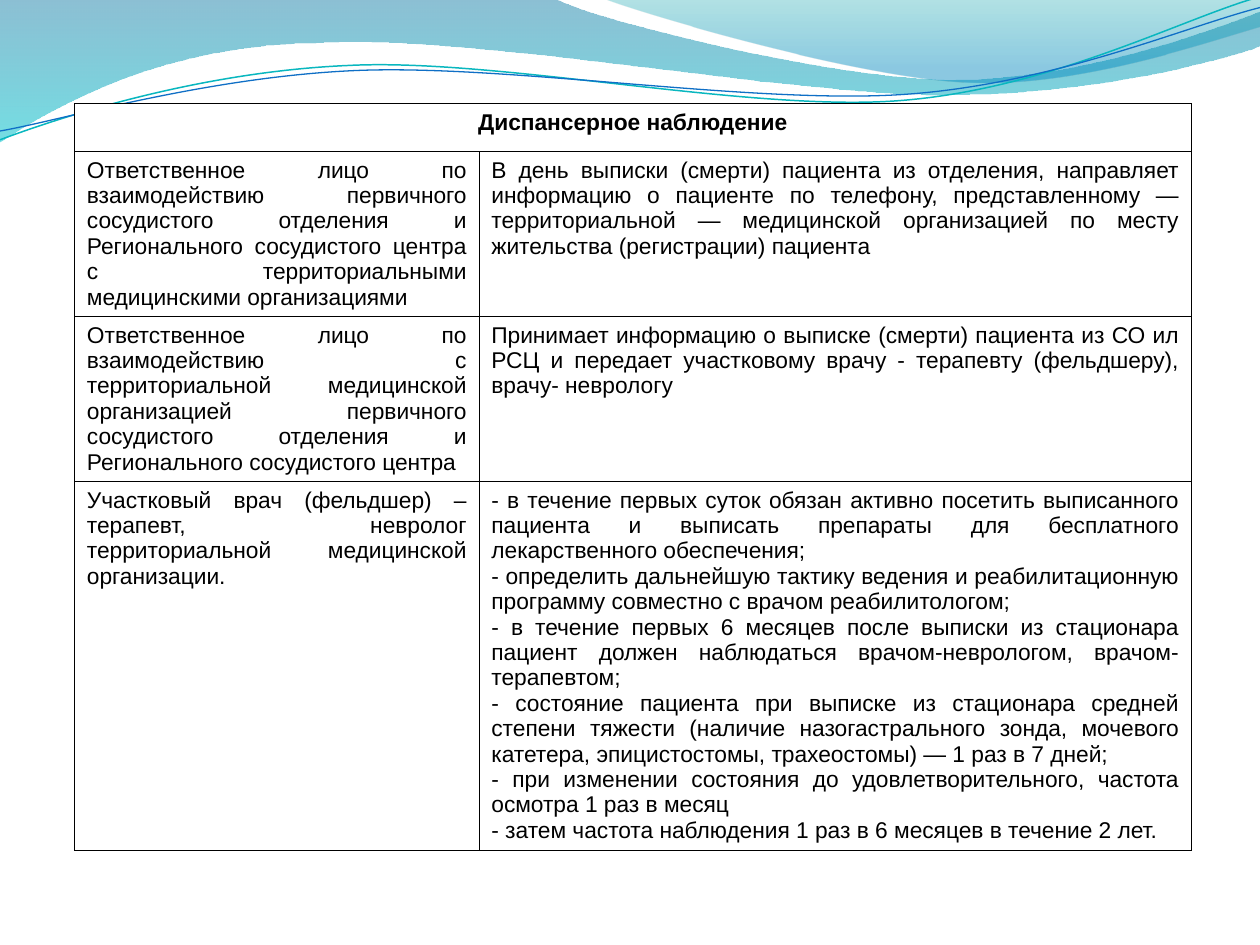
from dataclasses import dataclass

from lxml.etree import SubElement
from pptx import Presentation
from pptx.dml.color import RGBColor
from pptx.enum.text import PP_ALIGN
from pptx.oxml.ns import qn
from pptx.util import Inches, Pt


@dataclass(frozen=True)
class Theme:
    font: str = "Arial"
    size: float = 13
    text: str = "000000"
    paper: str = "FFFFFF"
    border: float = 0.06
    # Gradient stops: position in percent, colour, opacity in percent
    wave: tuple = ((0, "0074A0", 45), (100, "00C4CD", 55))
    crest: tuple = ((20, "008ABF", 45), (100, "00A0A8", 30))
    teal: str = "09B7BF"
    blue: str = "0F6FC6"


THEME = Theme()
W, H = 10, 7.5
COLUMNS = (3.21, 5.65)
ROW_HEIGHTS = (0.38, 1.31, 1.31, 2.93)

# Outlines in inches: a pair is a straight step, six numbers are a Bezier curve
WAVE = [(0, 0), (4.4, -0.01), (4.76, 0.17, 6.64, 0.63, 7.58, 0.63),
        (8.53, 0.63, 9.58, 0.26, 10, 0.09), (10.01, 0.36),
        (9.83, 0.44, 8.7, 0.76, 7.46, 0.75),
        (6.22, 0.75, 3.82, 0.28, 2.57, 0.34),
        (1.29, 0.35, 0.46, 0.83, -0.01, 1.13)]
CREST = [(4.79, -0.01), (5.09, 0.11, 6.82, 0.62, 7.69, 0.65),
         (8.56, 0.69, 9.61, 0.32, 10, 0.21), (10, 0)]
TEAL_LINE = [(0, 1.11), (0.48, 0.93, 1.58, 0.57, 2.77, 0.52),
             (3.95, 0.46, 5.93, 0.89, 7.13, 0.8),
             (8.33, 0.71, 9.38, 0.15, 9.98, -0.02)]
BLUE_LINE = [(0, 1.04), (0.47, 0.96, 1.64, 0.61, 2.83, 0.56),
             (4.03, 0.51, 5.97, 0.83, 7.17, 0.75),
             (8.36, 0.67, 9.41, 0.21, 10, 0.06)]

HEADER = "Диспансерное наблюдение"
ROWS = [
    ("Ответственное лицо по взаимодействию первичного сосудистого отделения и "
     "Регионального сосудистого центра с территориальными медицинскими организациями",
     "В день выписки (смерти) пациента из отделения, направляет информацию о пациенте "
     "по телефону, представленному — территориальной — медицинской организацией по месту "
     "жительства (регистрации) пациента"),
    ("Ответственное лицо по взаимодействию с территориальной медицинской организацией "
     "первичного сосудистого отделения и Регионального сосудистого центра",
     "Принимает информацию о выписке (смерти) пациента из СО ил РСЦ и передает "
     "участковому врачу - терапевту (фельдшеру), врачу- неврологу"),
    ("Участковый врач (фельдшер) – терапевт, невролог территориальной медицинской "
     "организации.",
     "\n".join([
         "- в течение первых суток обязан активно посетить выписанного пациента и выписать "
         "препараты для бесплатного лекарственного обеспечения;",
         "- определить дальнейшую тактику ведения и реабилитационную программу совместно с "
         "врачом реабилитологом;",
         "- в течение первых 6 месяцев после выписки из стационара пациент должен "
         "наблюдаться врачом-неврологом, врачом-терапевтом;",
         "- состояние пациента при выписке из стационара средней степени тяжести (наличие "
         "назогастрального зонда, мочевого катетера, эпицистостомы, трахеостомы) — 1 раз в "
         "7 дней;",
         "- при изменении состояния до удовлетворительного, частота осмотра 1 раз в месяц",
         "- затем частота наблюдения 1 раз в 6 месяцев в течение 2 лет.",
     ])),
]


def rgb(value):
    return RGBColor.from_string(value)


def add_outline(s, box, outline, close):
    left, top, width, height = box

    def place(x, y):
        return Inches(left + x * width / W), Inches(top + y * height / H)

    # Anchors first, joined by straight steps
    anchors = [place(*step[-2:]) for step in outline]
    builder = s.shapes.build_freeform(*anchors[0])
    builder.add_line_segments(anchors[1:], close=close)
    sp = builder.convert_to_shape()
    sp.shadow.inherit = False
    # Then bend the steps that have control points
    for node, step in zip(list(sp.element.iter(qn("a:lnTo"))), outline[1:]):
        if len(step) == 6:
            node.tag = qn("a:cubicBezTo")
            end = node[0]
            for x, y in (place(*step[:2]), place(*step[2:4])):
                pt = SubElement(node, qn("a:pt"), x=str(x - sp.left), y=str(y - sp.top))
                end.addprevious(pt)
    return sp


def add_waves(s, box):
    # Translucent bands
    for outline, stops, angle in ((WAVE, THEME.wave, 270), (CREST, THEME.crest, 90)):
        sp = add_outline(s, box, outline, True)
        sp.line.fill.background()
        sp.fill.gradient()
        sp.fill.gradient_angle = angle
        for stop, (position, color, _) in zip(sp.fill.gradient_stops, stops):
            stop.position = position / 100
            stop.color.rgb = rgb(color)
        for clr, (_, _, opacity) in zip(sp.element.iter(qn("a:srgbClr")), stops):
            SubElement(clr, qn("a:alpha"), val=str(opacity * 1000))
    # Thin lines
    for outline, color, width in ((TEAL_LINE, THEME.teal, 0.85),
                                  (BLUE_LINE, THEME.blue, 0.75)):
        sp = add_outline(s, box, outline, False)
        sp.fill.background()
        sp.line.color.rgb = rgb(color)
        sp.line.width = Pt(width)


def format_cell(cell, text, align, bold):
    tf = cell.text_frame
    tf.text = text
    for p in tf.paragraphs:
        p.alignment = align
        for r in p.runs:
            r.font.name = THEME.font
            r.font.size = Pt(THEME.size)
            r.font.bold = bold
            r.font.color.rgb = rgb(THEME.text)


def frame_cell(cell):
    tc_pr = cell._tc.get_or_add_tcPr()
    for side in ("lnL", "lnR", "lnT", "lnB"):
        ln = SubElement(tc_pr, qn("a:" + side), w=str(Pt(THEME.border)))
        SubElement(SubElement(ln, qn("a:solidFill")), qn("a:srgbClr"), val=THEME.text)
    cell.fill.solid()
    cell.fill.fore_color.rgb = rgb(THEME.paper)


def add_care_table(s, box):
    width, height = box[2:]
    table = s.shapes.add_table(len(ROWS) + 1, 2, *map(Inches, box)).table
    table.first_row = table.horz_banding = False
    for column, share in zip(table.columns, COLUMNS):
        column.width = Inches(width * share / sum(COLUMNS))
    for row, share in zip(table.rows, ROW_HEIGHTS):
        row.height = Inches(height * share / sum(ROW_HEIGHTS))
    for cell in table.iter_cells():
        frame_cell(cell)
    # Header across both columns
    table.cell(0, 0).merge(table.cell(0, 1))
    format_cell(table.cell(0, 0), HEADER, PP_ALIGN.CENTER, True)
    # Who is responsible, and for what
    for i, texts in enumerate(ROWS, 1):
        for j, text in enumerate(texts):
            format_cell(table.cell(i, j), text, PP_ALIGN.JUSTIFY, False)


def main():
    prs = Presentation()
    prs.slide_width, prs.slide_height = Inches(W), Inches(H)
    s = prs.slides.add_slide(prs.slide_layouts[6])
    s.background.fill.solid()
    s.background.fill.fore_color.rgb = rgb(THEME.paper)
    add_waves(s, (0, 0, W, H))
    add_care_table(s, (0.59, 0.82, 8.86, 5.93))
    prs.save("out.pptx")


if __name__ == "__main__":
    main()
